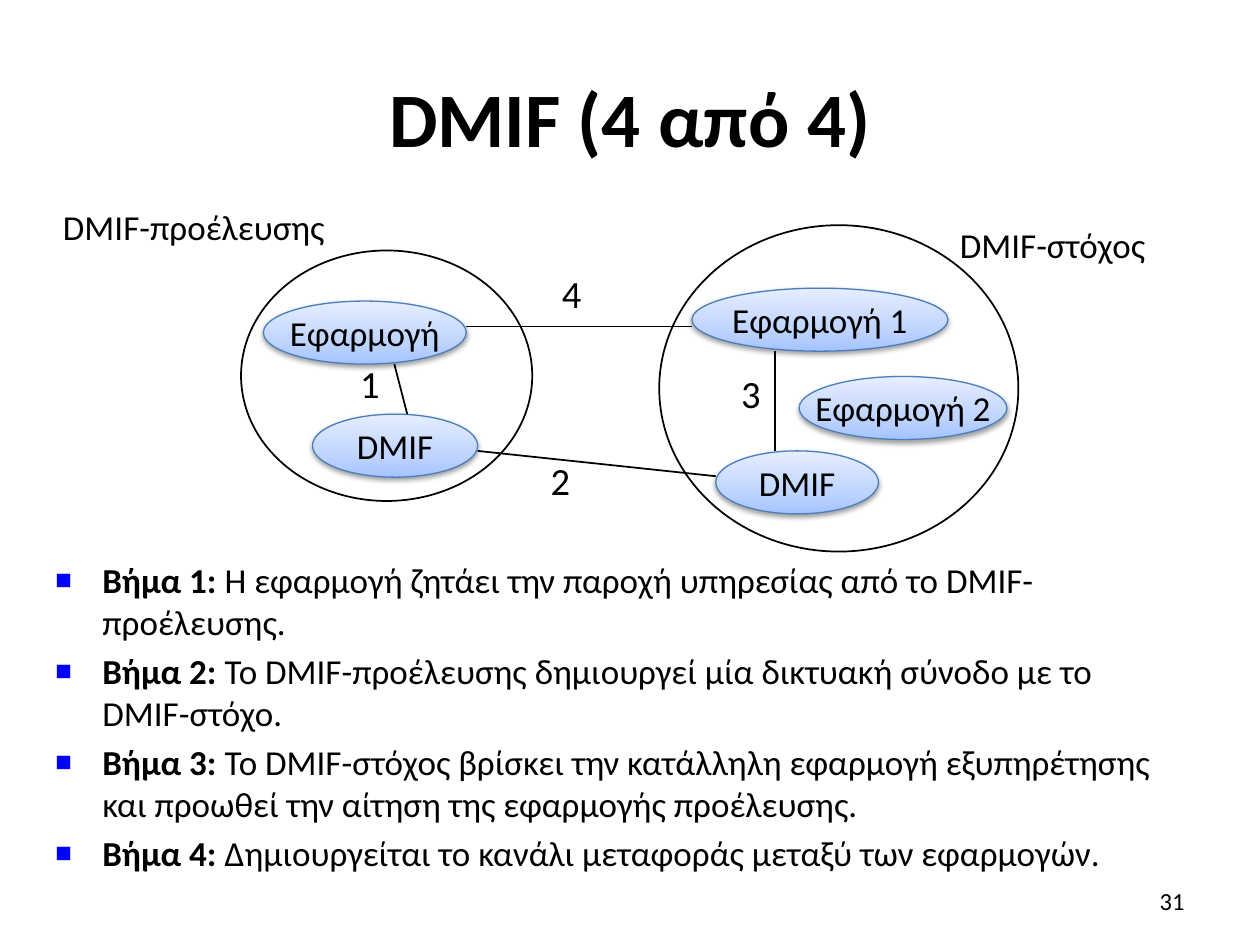
from lxml.etree import SubElement
from pptx import Presentation
from pptx.dml.color import RGBColor
from pptx.enum.shapes import MSO_CONNECTOR, MSO_SHAPE
from pptx.enum.text import MSO_ANCHOR, MSO_AUTO_SIZE, PP_ALIGN
from pptx.oxml.ns import qn
from pptx.util import Cm, Pt

COLORS = {
    "text": "000000",
    "line": "000000",
    "node_line": "4B7EBC",
    "bullet": "0000FF",
    "shadow": "000000",
}
NODE_GRADIENT = [(0, "A4C4FF"), (35, "BFD4FF"), (100, "E6EEFF")]
FONT = "Calibri"
NODE_HEIGHT = 1.27

# Domains: outer oval, label and nodes, in cm from the diagram's corner
DOMAINS = [
    {
        "oval": (3.84, 1.04, 5.87, 5.05),
        "label": ("DMIF-προέλευσης", (0, 0, 5.99, 1.12)),
        "nodes": [("Εφαρμογή", 4.29, 2.06, 4.09), ("DMIF", 5.28, 4.34, 3.33)],
    },
    {
        "oval": (12.27, 0.53, 7.24, 6.58),
        "label": ("DMIF-στόχος", (18.08, 0.38, 5.33, 1.12)),
        "nodes": [
            ("Εφαρμογή 1", 12.93, 1.8, 5.16),
            ("Εφαρμογή 2", 15.09, 3.58, 4.19),
            ("DMIF", 13.41, 5.08, 3.28),
        ],
    },
]
# Links: number, its corner, start and end
LINKS = [
    ("1", (5.99, 3.12), (6.93, 3.33), (7.19, 4.34)),
    ("2", (9.83, 5.08), (8.61, 5.08), (13.41, 5.59)),
    ("3", (13.67, 3.33), (14.6, 5.08), (14.6, 3.07)),
    ("4", (10.06, 1.3), (8.38, 2.57), (12.93, 2.57)),
]
STEPS = [
    "Η εφαρμογή ζητάει την παροχή υπηρεσίας από το DMIF-προέλευσης.",
    "Το DMIF-προέλευσης δημιουργεί μία δικτυακή σύνοδο με το DMIF-στόχο.",
    "Το DMIF-στόχος βρίσκει την κατάλληλη εφαρμογή εξυπηρέτησης "
    "και προωθεί την αίτηση της εφαρμογής προέλευσης.",
    "Δημιουργείται το κανάλι μεταφοράς μεταξύ των εφαρμογών.",
]


def color(name):
    return RGBColor.from_string(COLORS[name])


def lengths(*values):
    return [Cm(value) for value in values]


def inside(box, left, top, *size):
    return lengths(box[0] + left, box[1] + top, *size)


def place(shape, box):
    shape.left, shape.top, shape.width, shape.height = lengths(*box)


def write(para, text, size=20, bold=False, align=None):
    if align is not None:
        para.alignment = align
    span = para.add_run()
    span.text = text
    span.font.name = FONT
    span.font.size = Pt(size)
    span.font.bold = bold
    span.font.color.rgb = color("text")


def add_label(shapes, position, text, wrap=True, anchor=MSO_ANCHOR.TOP, **style):
    frame = shapes.add_textbox(*position).text_frame
    frame.word_wrap = wrap
    frame.vertical_anchor = anchor
    write(frame.paragraphs[0], text, **style)


def add_oval(shapes, position, line, width):
    oval = shapes.add_shape(MSO_SHAPE.OVAL, *position)
    oval.shadow.inherit = False
    oval.fill.background()
    oval.line.color.rgb = color(line)
    oval.line.width = Pt(width)
    return oval


def add_node(shapes, position, text):
    node = add_oval(shapes, position, "node_line", 0.75)
    properties = node._element.spPr

    # Gradient with three stops, light at the top
    node.fill.gradient()
    node.fill.gradient_angle = 90
    stops = properties.find(qn("a:gradFill")).find(qn("a:gsLst"))
    for stop in list(stops):
        stops.remove(stop)
    for percent, value in NODE_GRADIENT:
        stop = SubElement(stops, qn("a:gs"), pos=str(percent * 1000))
        SubElement(stop, qn("a:srgbClr"), val=value)

    # Soft shadow below
    shadow = SubElement(
        properties.find(qn("a:effectLst")), qn("a:outerShdw"),
        blurRad=str(Pt(3.1)), dist=str(Pt(1.6)), dir="5400000", rotWithShape="0",
    )
    shade = SubElement(shadow, qn("a:srgbClr"), val=COLORS["shadow"])
    SubElement(shade, qn("a:alpha"), val="38000")

    frame = node.text_frame
    frame.word_wrap = False
    frame.vertical_anchor = MSO_ANCHOR.MIDDLE
    write(frame.paragraphs[0], text, align=PP_ALIGN.CENTER)


def add_domain(shapes, box, domain):
    add_oval(shapes, inside(box, *domain["oval"]), "line", 1)
    for text, left, top, width in domain["nodes"]:
        add_node(shapes, inside(box, left, top, width, NODE_HEIGHT), text)
    text, position = domain["label"]
    add_label(shapes, inside(box, *position), text)


def add_link(shapes, box, number, corner, start, end):
    link = shapes.add_connector(
        MSO_CONNECTOR.STRAIGHT, *inside(box, *start), *inside(box, *end)
    )
    link.line.color.rgb = color("line")
    link.line.width = Pt(1)
    SubElement(link._element.spPr, qn("a:effectLst"))
    add_label(shapes, inside(box, *corner, 0.91, 1.19), number, wrap=False, size=22)


def add_diagram(page, box):
    shapes = page.shapes.add_group_shape().shapes
    for domain in DOMAINS:
        add_domain(shapes, box, domain)
    for link in LINKS:
        add_link(shapes, box, *link)


def add_title(page, box):
    title = page.shapes.title
    place(title, box)
    frame = title.text_frame
    frame.vertical_anchor = MSO_ANCHOR.MIDDLE
    write(frame.paragraphs[0], "DMIF (4 από 4)", size=44, bold=True,
          align=PP_ALIGN.CENTER)


def add_bullet(para):
    properties = para._p.get_or_add_pPr()
    properties.set("marL", str(Cm(0.95)))
    properties.set("indent", str(Cm(-0.95)))
    tint = SubElement(properties, qn("a:buClr"))
    SubElement(tint, qn("a:srgbClr"), val=COLORS["bullet"])
    SubElement(properties, qn("a:buSzPct"), val="50000")
    SubElement(properties, qn("a:buFont"), typeface=FONT)
    SubElement(properties, qn("a:buChar"), char="■")


def add_steps(page, box):
    body = page.placeholders[1]
    place(body, box)
    frame = body.text_frame
    frame.auto_size = MSO_AUTO_SIZE.NONE
    for number, text in enumerate(STEPS, 1):
        para = frame.paragraphs[0] if number == 1 else frame.add_paragraph()
        add_bullet(para)
        para.space_before = Pt(0 if number == 1 else 4)
        write(para, f"Βήμα {number}: ", bold=True)
        write(para, text)


def add_page_number(page, box):
    add_label(page.shapes, lengths(*box), "31", anchor=MSO_ANCHOR.MIDDLE,
              size=14, align=PP_ALIGN.RIGHT)


def main():
    deck = Presentation()
    deck.slide_width, deck.slide_height = lengths(25.4, 19.05)
    page = deck.slides.add_slide(deck.slide_layouts[1])
    add_title(page, (1.27, 0.76, 22.86, 3.18))
    add_diagram(page, (1.02, 4.01))
    add_steps(page, (0.86, 11.13, 23.04, 7.01))
    add_page_number(page, (18.21, 17.65, 5.92, 1.02))
    deck.save("out.pptx")


if __name__ == "__main__":
    main()
